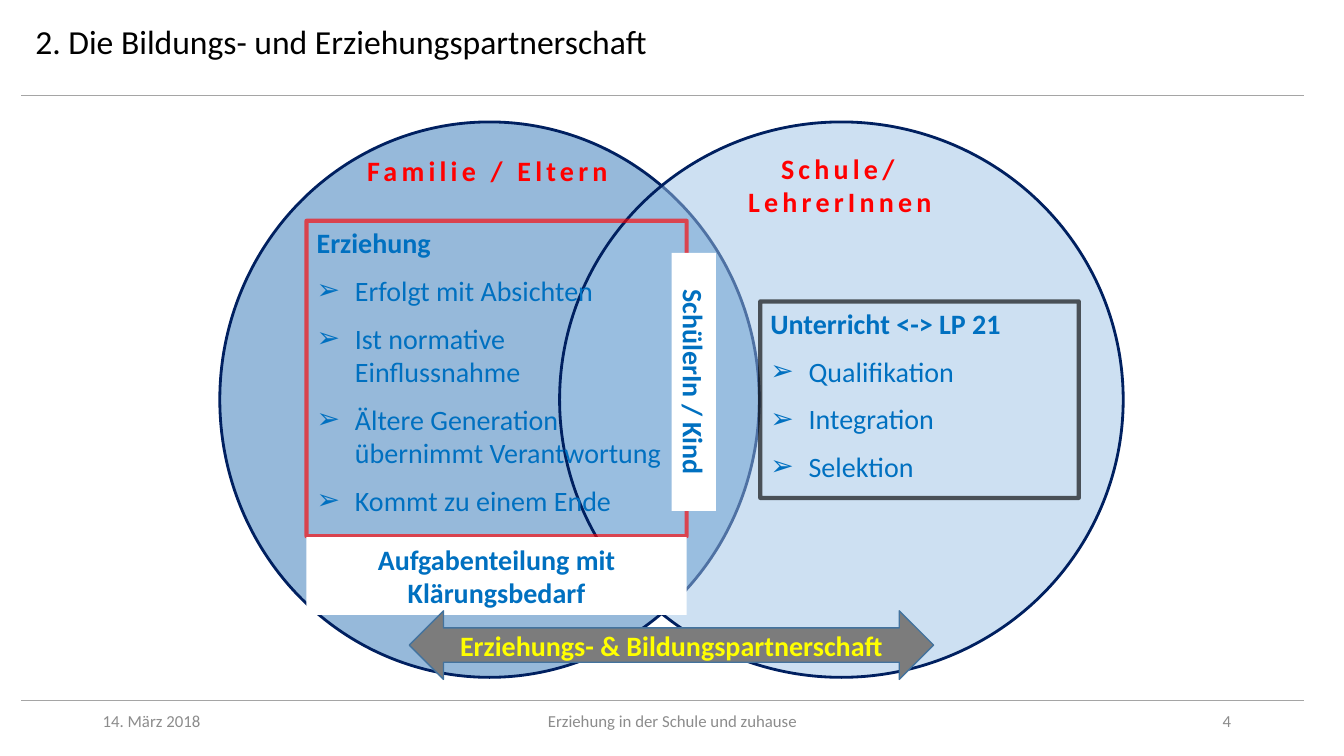
import pptx
import pptx.util
import pptx.dml.color
import pptx.enum.shapes
import pptx.enum.text
import pptx.oxml
import pptx.oxml.ns

PX = 9144  # 100 px to the inch
WIDE, HIGH = 1333, 750
INK = {
    "black": "000000", "white": "FFFFFF", "rule": "A5A5A5", "foot": "8C8C8C",
    "navy": "002060", "home": "2E75B6", "school": "9DC3E6", "red": "FF0000",
    "text": "0070C0", "arrow": "7C7C7C", "edge": "43739E", "yellow": "FFFF00",
}
FORM = pptx.enum.shapes.MSO_SHAPE
ALIGN = pptx.enum.text.PP_ALIGN
ANCHOR = pptx.enum.text.MSO_ANCHOR
Pt = pptx.util.Pt
BOLD = {"size": Pt(20), "bold": True}
PLAIN = {"size": Pt(20), "bold": False}
FOOT = {"size": Pt(12), "bold": False}


def tint(name):
    return pptx.dml.color.RGBColor.from_string(INK[name])


def add(node, tag, **attrs):
    child = pptx.oxml.parse_xml(f"<a:{tag} {pptx.oxml.ns.nsdecls('a')}/>")
    for key, val in attrs.items():
        child.set(key, val)
    node.append(child)


def fade(node, share):
    """Make the colours of a solid fill let light through; share is opacity in percent."""
    for color in node.iter(pptx.oxml.ns.qn("a:srgbClr")):
        add(color, "alpha", val=str(share * 1000))


def place(shape, box):
    for key, val in zip(("left", "top", "width", "height"), box):
        setattr(shape, key, val * PX)


def frame(shape, anchor=ANCHOR.TOP):
    body = shape.text_frame
    form = {"word_wrap": True, "vertical_anchor": anchor,
            "auto_size": pptx.enum.text.MSO_AUTO_SIZE.NONE}
    for key, val in form.items():
        setattr(body, key, val)
    return body


def write(para, text, look, color, align=ALIGN.LEFT, gap=0):
    """Fill a paragraph with one run; gap is the space above in points."""
    para.alignment = align
    para.space_before = Pt(gap)
    run = para.add_run()
    run.text = text
    for key, val in {"name": "Calibri", **look}.items():
        setattr(run.font, key, val)
    run.font.color.rgb = tint(color)
    return run


def label(slide, box, text, look, color, align=ALIGN.CENTER, anchor=ANCHOR.TOP):
    shape = slide.shapes.add_textbox(*(n * PX for n in box))
    body = frame(shape, anchor)
    return write(body.paragraphs[0], text, look, color, align)


def solid(slide, form, box, fill, edge=None, width=1):
    shape = slide.shapes.add_shape(form, *(n * PX for n in box))
    shape.shadow.inherit = False
    shape.fill.solid()
    shape.fill.fore_color.rgb = tint(fill)
    if edge:
        shape.line.color.rgb = tint(edge)
        shape.line.width = Pt(width)
    else:
        shape.line.fill.background()
    return shape


def plate(slide, box, text, turn=0):
    shape = solid(slide, FORM.RECTANGLE, box, "white")
    shape.rotation = turn
    write(frame(shape).paragraphs[0], text, BOLD, "text", ALIGN.CENTER)


def rule(slide, y):
    line = slide.shapes.add_connector(
        pptx.enum.shapes.MSO_CONNECTOR.STRAIGHT,
        21 * PX, y * PX, 1293 * PX, y * PX)
    line.line.color.rgb = tint("rule")
    line.line.width = Pt(0.5)
    add(line._element.spPr, "effectLst")


def head(slide, box, text):
    place(slide.shapes.title, box)
    body = frame(slide.shapes.title)
    write(body.paragraphs[0], text, {"size": Pt(24), "bold": False}, "black")
    rule(slide, 95)


def foot(slide, top):
    rule(slide, top)
    parts = [(92, 300, "14. März 2018", ALIGN.LEFT),
             (442, 450, "Erziehung in der Schule und zuhause", ALIGN.CENTER),
             (931, 300, "4", ALIGN.RIGHT)]
    for left, width, text, align in parts:
        label(slide, (left, top, width, 40), text, FOOT, "foot", align, ANCHOR.MIDDLE)


def circle(slide, box, fill, title, inset):
    """Draw a see-through circle with its title placed by inset (x, y, width, height)."""
    shape = solid(slide, FORM.OVAL, box, fill, "navy", 2)
    fade(shape._element.spPr.find(pptx.oxml.ns.qn("a:solidFill")), 50)
    x, y, width, height = inset
    run = label(slide, (box[0] + x, box[1] + y, width, height), title, BOLD, "red")
    run.font._element.set("spc", "300")


def tasks(slide, holder, box, edge, title, items):
    """Lay out a framed list in a body placeholder, in front of the circles."""
    place(holder, box)
    slide.shapes._spTree.append(holder._element)
    holder.line.color.rgb = tint(edge)
    holder.line.width = Pt(3)
    fade(holder.line._ln, 63)
    body = frame(holder)
    para = body.paragraphs[0]
    write(para, title, BOLD, "text")
    props = para._p.get_or_add_pPr()
    for key in ("marL", "indent"):
        props.set(key, "0")
    add(props, "buNone")
    for item in items:
        para = body.add_paragraph()
        write(para, item, PLAIN, "text", gap=10)
        props = para._p.get_or_add_pPr()
        for key, val in {"marL": 38, "indent": -38}.items():
            props.set(key, str(val * PX))
        add(props, "buChar", char="➢")


def bridge(slide, box, text):
    shape = solid(slide, FORM.LEFT_RIGHT_ARROW, box, "arrow", "edge")
    body = frame(shape, ANCHOR.MIDDLE)
    write(body.paragraphs[0], text, BOLD, "yellow", ALIGN.CENTER)


def main():
    deck = pptx.Presentation()
    deck.slide_width, deck.slide_height = WIDE * PX, HIGH * PX
    slide = deck.slides.add_slide(deck.slide_layouts.get_by_name("Two Content"))
    home, school = list(slide.placeholders)[1:]

    head(slide, (25, 16, 1283, 50), "2. Die Bildungs- und Erziehungspartnerschaft")
    foot(slide, 695)
    circle(slide, (218, 121, 535, 551), "home", "Familie / Eltern", (130, 26, 271, 44))
    circle(slide, (555, 121, 559, 551), "school", "Schule/ LehrerInnen",
           (143, 24, 270, 77))
    tasks(slide, home, (304, 219, 377, 313), "red", "Erziehung",
          ["Erfolgt mit Absichten", "Ist normative Einflussnahme",
           "Ältere Generation übernimmt Verantwortung", "Kommt zu einem Ende"])
    tasks(slide, school, (754, 299, 316, 195), "black", "Unterricht <-> LP 21",
          ["Qualifikation", "Integration", "Selektion"])
    plate(slide, (560, 357, 256, 44), "SchülerIn / Kind", 90)
    plate(slide, (304, 533, 377, 77), "Aufgabenteilung mit Klärungsbedarf")
    bridge(slide, (406, 606, 520, 68), "Erziehungs- & Bildungspartnerschaft")
    deck.save("out.pptx")


if __name__ == "__main__":
    main()
